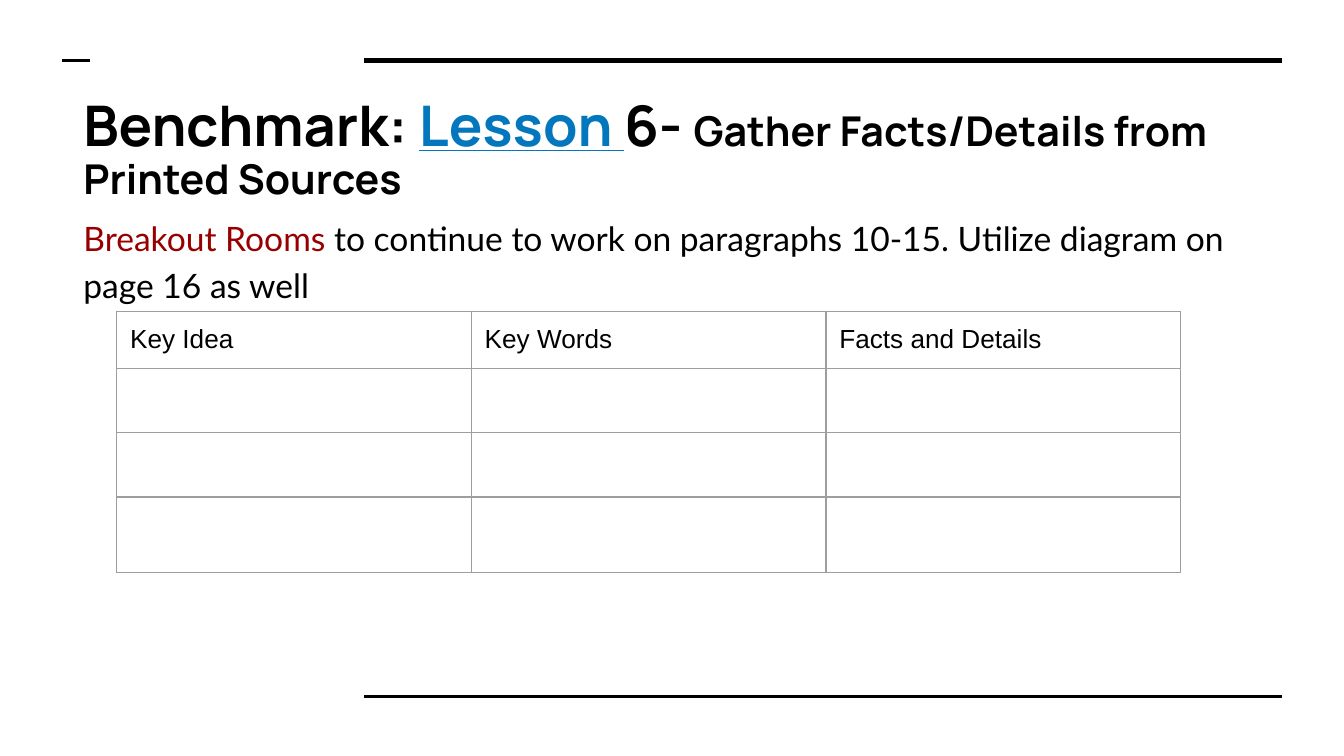
from lxml.etree import SubElement
from pptx import Presentation
from pptx.dml.color import RGBColor
from pptx.enum.shapes import MSO_CONNECTOR as Connector
from pptx.enum.text import MSO_ANCHOR as Anchor, MSO_AUTO_SIZE as AutoSize, PP_ALIGN as Align
from pptx.oxml import parse_xml
from pptx.oxml.ns import nsdecls, qn
from pptx.util import Pt

BLACK, BLUE, RED, GREY = "000000", "0277BD", "980000", "9E9E9E"


def colour(value):
    """Turn a hex string into a colour."""
    return RGBColor.from_string(value)


def add_run(para, text, font, size, ink=BLACK, bold=False, underline=False):
    """Add one formatted run to a paragraph."""
    run = para.add_run()
    run.text = text
    run.font.name, run.font.size = font, Pt(size)
    run.font.bold, run.font.underline = bold, underline
    run.font.color.rgb = colour(ink)


def place_text(holder, box, spacing):
    """Move a placeholder to its box and return its plain first paragraph."""
    holder.left, holder.top, holder.width, holder.height = map(Pt, box)
    frame = holder.text_frame
    frame.word_wrap, frame.auto_size = True, AutoSize.NONE
    frame.vertical_anchor = Anchor.TOP
    frame.margin_left = frame.margin_right = Pt(7.2)
    frame.margin_top = frame.margin_bottom = Pt(7.2)
    para = frame.paragraphs[0]
    para.alignment, para.line_spacing = Align.LEFT, spacing
    para.space_before = para.space_after = Pt(0)
    properties = para._p.get_or_add_pPr()
    properties.set("marL", "0")
    properties.set("indent", "0")
    SubElement(properties, qn("a:buNone"))
    return para


def add_rule(page, left, right, top, weight):
    """Draw a horizontal black rule."""
    rule = page.shapes.add_connector(Connector.STRAIGHT, Pt(left), Pt(top), Pt(right), Pt(top))
    rule.line.color.rgb, rule.line.width = colour(BLACK), Pt(weight)
    SubElement(rule._element.spPr, qn("a:effectLst"))


def add_title(page, box):
    """Fill the title placeholder."""
    para = place_text(page.shapes.title, box, 0.9)
    add_run(para, "Benchmark: ", "Manrope", 30, bold=True)
    add_run(para, "Lesson ", "Manrope", 30, BLUE, bold=True, underline=True)
    add_run(para, "6- ", "Manrope", 30, bold=True)
    add_run(para, "Gather Facts/Details from Printed Sources", "Manrope", 22, bold=True)


def add_instructions(page, box):
    """Fill the body placeholder."""
    para = place_text(page.placeholders[1], box, 1.15)
    add_run(para, "Breakout Rooms ", "Lato", 18, RED)
    add_run(para, "to continue to work on paragraphs 10-15. Utilize diagram on page 16 as well", "Lato", 18)


def style_cell(cell):
    """Clear a cell's fill and give it thin grey borders."""
    cell.margin_left = cell.margin_right = Pt(7.2)
    cell.margin_top = cell.margin_bottom = Pt(7.2)
    cell.fill.background()
    properties = cell._tc.get_or_add_tcPr()
    for index, side in enumerate(("lnL", "lnR", "lnT", "lnB")):
        properties.insert(index, parse_xml(
            f'<a:{side} {nsdecls("a")} w="{Pt(0.75)}"><a:solidFill>'
            f'<a:srgbClr val="{GREY}"/></a:solidFill></a:{side}>'))


def add_notes_table(page, box, headings, heights):
    """Add the note-taking table with equal columns and empty rows."""
    table = page.shapes.add_table(len(heights), len(headings), *map(Pt, box)).table
    table.horz_banding = table.first_row = False
    for row, height in zip(table.rows, heights):
        row.height = Pt(height)
    for cell in table.iter_cells():
        style_cell(cell)
        cell.text_frame.paragraphs[0].font.size = Pt(14)
    for cell, heading in zip(table.rows[0].cells, headings):
        add_run(cell.text_frame.paragraphs[0], heading, "Arial", 14)


def build():
    """Build and save the deck."""
    deck = Presentation()
    deck.slide_width, deck.slide_height = Pt(720), Pt(405)
    page = deck.slides.add_slide(deck.slide_layouts[1])
    add_rule(page, 195, 686.75, 32.5, 3)
    add_rule(page, 195, 686.75, 373, 1.5)
    add_rule(page, 33.5, 48, 32.5, 1.5)
    add_title(page, (37.5, 45.5, 649.5, 49.5))
    add_instructions(page, (37.5, 106.5, 649.5, 258))
    heights = (30.25, 34.5, 34.5, 40.5)
    add_notes_table(page, (62.5, 167, 570, sum(heights)),
                    ("Key Idea", "Key Words", "Facts and Details"), heights)
    deck.save("out.pptx")


if __name__ == "__main__":
    build()
